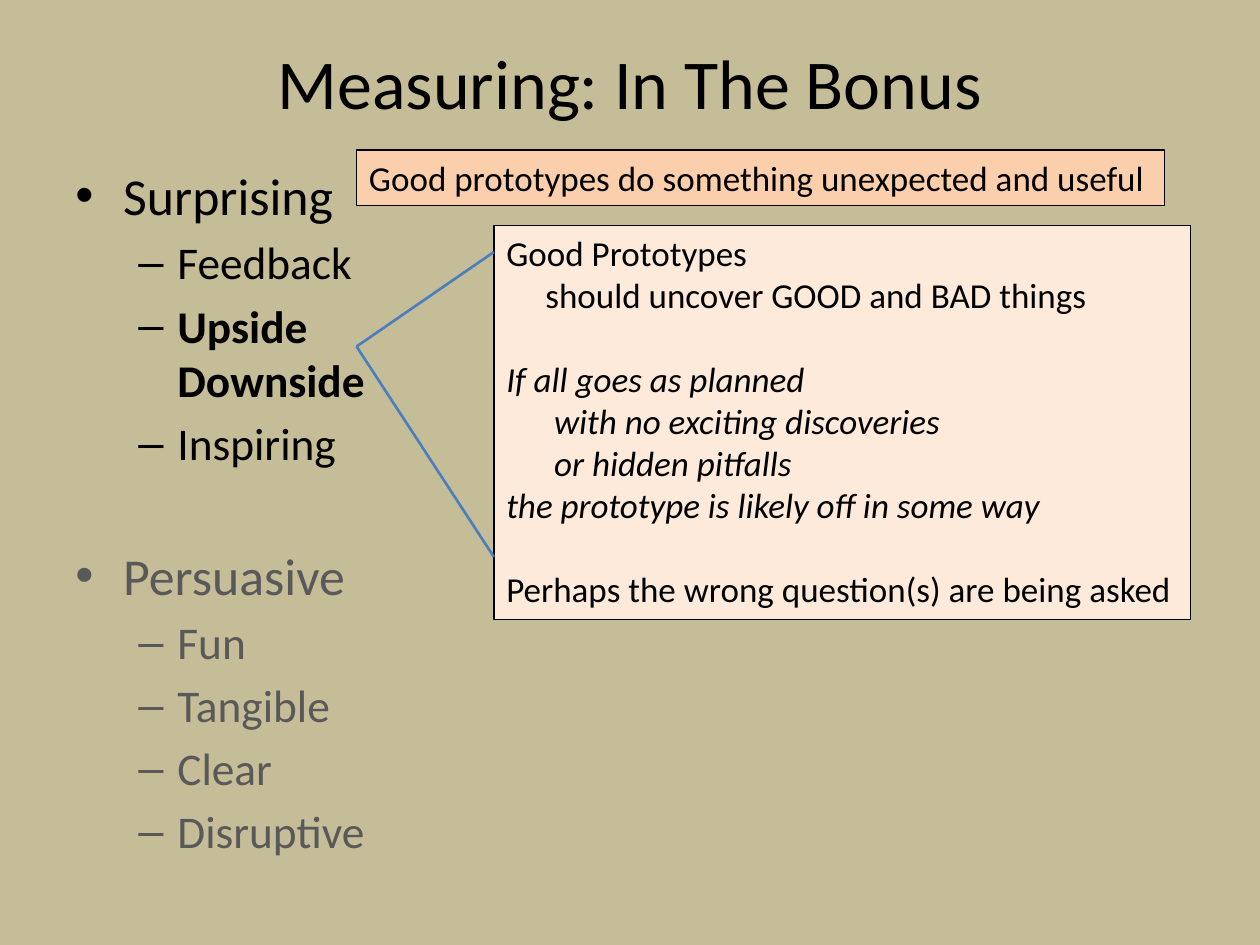
"""Build the slide on measuring how surprising and persuasive a prototype is."""
from lxml import etree
from pptx import Presentation
from pptx.dml.color import RGBColor
from pptx.enum.shapes import MSO_CONNECTOR, MSO_SHAPE
from pptx.enum.text import MSO_ANCHOR, PP_ALIGN
from pptx.oxml.ns import qn
from pptx.util import Inches, Pt

STRAIGHT = MSO_CONNECTOR.STRAIGHT
RECTANGLE = MSO_SHAPE.RECTANGLE
TOP, MIDDLE = MSO_ANCHOR.TOP, MSO_ANCHOR.MIDDLE
LEFT, CENTER = PP_ALIGN.LEFT, PP_ALIGN.CENTER
FONT = "Calibri"
BLACK, GRAY = "000000", "595959"


def rgb(value):
    return RGBColor.from_string(value)


def write(paragraph, text, size, color=BLACK, bold=False, italic=False):
    paragraph.text = text
    for run in paragraph.runs:
        run.font.name = FONT
        run.font.size = Pt(size)
        run.font.bold = bold
        run.font.italic = italic
        run.font.color.rgb = rgb(color)


prs = Presentation()
prs.slide_width, prs.slide_height = Inches(10), Inches(7.5)
slide = prs.slides.add_slide(prs.slide_layouts[6])
slide.background.fill.solid()
slide.background.fill.fore_color.rgb = rgb("C4BD97")

title = slide.shapes.add_textbox(Inches(0.5), Inches(0.3), Inches(9), Inches(0.7)).text_frame
title.word_wrap = True
title.vertical_anchor = MIDDLE
title.paragraphs[0].alignment = CENTER
write(title.paragraphs[0], "Measuring: In The Bonus", 40)

# level, text, color, bold, space before
outline = [
    (0, "Surprising", BLACK, False, 5),
    (1, "Feedback", BLACK, False, 5),
    (1, "Upside\nDownside", BLACK, True, 5),
    (1, "Inspiring", BLACK, False, 5),
    (0, "Persuasive", GRAY, False, 42),
    (1, "Fun", GRAY, False, 5),
    (1, "Tangible", GRAY, False, 5),
    (1, "Clear", GRAY, False, 5),
    (1, "Disruptive", GRAY, False, 5),
]
level_styles = [(29.6, 0.38, 0.38, "•"), (25.9, 0.81, 0.31, "–")]
qualities = slide.shapes.add_textbox(Inches(0.5), Inches(1.25), Inches(9), Inches(5.45)).text_frame
qualities.word_wrap = True
for index, (level, text, color, bold, gap) in enumerate(outline):
    quality = qualities.add_paragraph() if index else qualities.paragraphs[0]
    size, margin, hanging, bullet = level_styles[level]
    write(quality, text, size, color, bold)
    quality.level = level
    quality.space_before = Pt(gap)
    properties = quality._p.get_or_add_pPr()
    properties.set("marL", str(Inches(margin)))
    properties.set("indent", str(-Inches(hanging)))
    etree.SubElement(properties, qn("a:buFont")).set("typeface", "Arial")
    etree.SubElement(properties, qn("a:buChar")).set("char", bullet)

# text, left margin, space before, italic
advice = [
    ("Good Prototypes", 0, 0, False),
    ("should uncover GOOD and BAD things", 0.31, 0, False),
    ("If all goes as planned", 0, 24, True),
    ("with no exciting discoveries", 0.38, 0, True),
    ("or hidden pitfalls", 0.38, 0, True),
    ("the prototype is likely off in some way", 0, 0, True),
    ("Perhaps the wrong question(s) are being asked", 0, 24, False),
]
summary = [("Good prototypes do something unexpected and useful", 0, 0, False)]
callouts = [
    (3.92, 1.79, 5.53, 3.13, "FDEADA", advice),
    (2.83, 1.19, 6.41, 0.44, "FBCFAB", summary),
]
for left, top, width, height, fill, lines in callouts:
    callout = slide.shapes.add_shape(
        RECTANGLE, Inches(left), Inches(top), Inches(width), Inches(height))
    callout.shadow.inherit = False
    callout.fill.solid()
    callout.fill.fore_color.rgb = rgb(fill)
    callout.line.color.rgb = rgb(BLACK)
    callout.line.width = Pt(0.75)
    frame = callout.text_frame
    frame.word_wrap = True
    frame.vertical_anchor = TOP
    for index, (text, margin, gap, italic) in enumerate(lines):
        line = frame.add_paragraph() if index else frame.paragraphs[0]
        write(line, text, 20, italic=italic)
        line.alignment = LEFT
        line.space_before = Pt(gap)
        line._p.get_or_add_pPr().set("marL", str(Inches(margin)))

for end_y in (2, 4.42):
    pointer = slide.shapes.add_connector(
        STRAIGHT, Inches(2.83), Inches(2.75), Inches(3.92), Inches(end_y))
    pointer.line.color.rgb = rgb("4B7EBC")
    pointer.line.width = Pt(1.5)
    etree.SubElement(pointer._element.spPr, qn("a:effectLst"))

prs.save("out.pptx")
